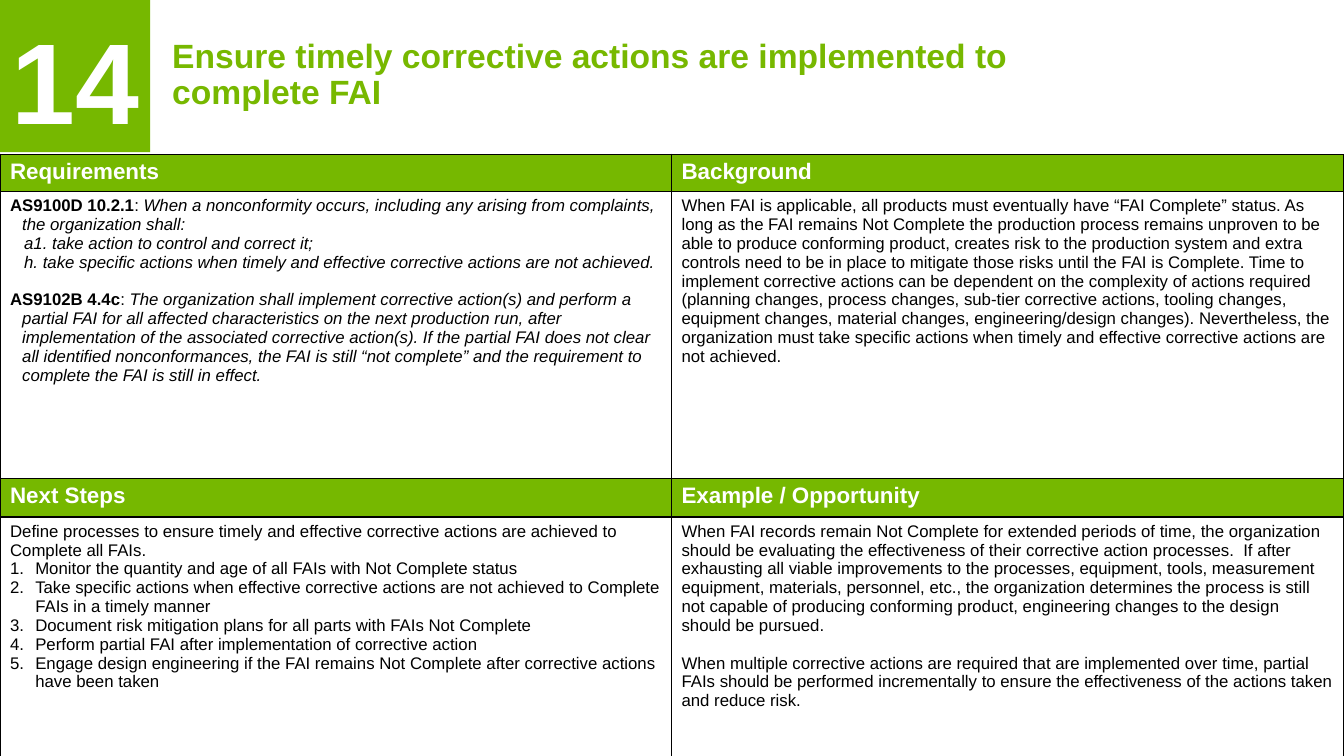
from pptx import Presentation
from pptx.dml.color import RGBColor
from pptx.enum.shapes import MSO_SHAPE as Shape
from pptx.enum.text import MSO_ANCHOR as Anchor, PP_ALIGN as Align
from pptx.oxml import parse_xml
from pptx.oxml.ns import nsdecls
from pptx.util import Inches, Pt

GREEN = RGBColor(0x76, 0xB8, 0x00)
TITLE_GREEN = RGBColor(0x77, 0xB8, 0x00)
WHITE = RGBColor(0xFF, 0xFF, 0xFF)
BLACK = RGBColor(0x00, 0x00, 0x00)

HEADING = {"size": Pt(16), "bold": True, "color": WHITE}
BODY = {"size": Pt(12), "bold": False, "italic": False, "color": BLACK}
STRONG = {**BODY, "bold": True}
QUOTE = {**BODY, "italic": True}
TITLE = {"size": Pt(24), "bold": True, "color": TITLE_GREEN}
NUMBER = {"size": Pt(82), "bold": True, "color": WHITE}

HANGING = {"indent": (0.12, -0.12)}
CLAUSE = {"indent": (0.26, -0.12)}
STEP = {"indent": (0.25, -0.25), "numbered": True}
AFTER_GAP = {"space_before": Pt(13.5)}

REQUIREMENTS = [
    ([("AS9100D 10.2.1", STRONG), (": ", BODY),
      ("When a nonconformity occurs, including any arising from complaints, "
       "the organization shall:", QUOTE)], HANGING),
    ([("a1. take action to control and correct it;", QUOTE)], CLAUSE),
    ([("h. take specific actions when timely and effective corrective actions "
       "are not achieved.", QUOTE)], CLAUSE),
    ([("AS9102B 4.4c", STRONG), (": ", BODY),
      ("The organization shall implement corrective action(s) and perform a "
       "partial FAI for all affected characteristics on the next production "
       "run, after implementation of the associated corrective action(s). If "
       "the partial FAI does not clear all identified nonconformances, the FAI "
       "is still “not complete” and the requirement to complete the FAI is "
       "still in effect.", QUOTE)], {**HANGING, **AFTER_GAP}),
]
BACKGROUND = [
    ([("When FAI is applicable, all products must eventually have “FAI "
       "Complete” status. As long as the FAI remains Not Complete the "
       "production process remains unproven to be able to produce conforming "
       "product, creates risk to the production system and extra controls need "
       "to be in place to mitigate those risks until the FAI is Complete. Time "
       "to implement corrective actions can be dependent on the complexity of "
       "actions required (planning changes, process changes, sub-tier "
       "corrective actions, tooling changes, equipment changes, material "
       "changes, engineering/design changes). Nevertheless, the organization "
       "must take specific actions when timely and effective corrective "
       "actions are not achieved.", BODY)], {}),
]
STEPS = [
    "Monitor the quantity and age of all FAIs with Not Complete status",
    "Take specific actions when effective corrective actions are not achieved "
    "to Complete FAIs in a timely manner",
    "Document risk mitigation plans for all parts with FAIs Not Complete",
    "Perform partial FAI after implementation of corrective action",
    "Engage design engineering if the FAI remains Not Complete after "
    "corrective actions have been taken",
]
NEXT_STEPS = [
    ([("Define processes to ensure timely and effective corrective actions are "
       "achieved to Complete all FAIs.", BODY)], {}),
    *[([(step, BODY)], STEP) for step in STEPS],
]
EXAMPLE = [
    ([("When FAI records remain Not Complete for extended periods of time, the "
       "organization should be evaluating the effectiveness of their "
       "corrective action processes.  If after exhausting all viable "
       "improvements to the processes, equipment, tools, measurement "
       "equipment, materials, personnel, etc., the organization determines the "
       "process is still not capable of producing conforming product, "
       "engineering changes to the design should be pursued.", BODY)], {}),
    ([("When multiple corrective actions are required that are implemented "
       "over time, partial FAIs should be performed incrementally to ensure "
       "the effectiveness of the actions taken and reduce risk.", BODY)],
     AFTER_GAP),
]


def heading(text):
    """Return the content of a heading cell."""
    return [([(text, HEADING)], {})]


ROWS = [
    (0.37, GREEN, [heading("Requirements"), heading("Background")]),
    (2.85, WHITE, [REQUIREMENTS, BACKGROUND]),
    (0.38, GREEN, [heading("Next Steps"), heading("Example / Opportunity")]),
    (2.38, WHITE, [NEXT_STEPS, EXAMPLE]),
]
COLUMNS = [6.66, 6.67]


def add_span(para, text, style):
    """Append a run of text with its font values."""
    span = para.add_run()
    span.text = text
    span.font.name = "Arial"
    for name, value in style.items():
        if name == "color":
            span.font.color.rgb = value
        else:
            setattr(span.font, name, value)


def format_para(para, layout):
    """Apply indent, numbering and paragraph values."""
    for name, value in layout.items():
        if name == "indent":
            margin, first = value
            para._p.get_or_add_pPr().set("marL", str(Inches(margin)))
            para._p.get_or_add_pPr().set("indent", str(Inches(first)))
        elif name == "numbered":
            para._p.get_or_add_pPr().append(parse_xml(
                f'<a:buAutoNum {nsdecls("a")} type="arabicPeriod"/>'))
        else:
            setattr(para, name, value)


def write(frame, content):
    """Fill a text frame with formatted paragraphs."""
    for index, (spans, layout) in enumerate(content):
        para = frame.add_paragraph() if index else frame.paragraphs[0]
        format_para(para, layout)
        for text, style in spans:
            add_span(para, text, style)


def add_borders(cell):
    """Draw a thin black line on every side of a cell."""
    properties = cell._tc.get_or_add_tcPr()
    for side in ("lnL", "lnR", "lnT", "lnB"):
        properties.append(parse_xml(
            f'<a:{side} {nsdecls("a")} w="{Pt(1)}"><a:solidFill>'
            f'<a:srgbClr val="{BLACK}"/></a:solidFill></a:{side}>'))


def add_title(page, text):
    """Add the slide title."""
    box = page.shapes.add_textbox(
        Inches(1.61), Inches(0.14), Inches(9.01), Inches(1.22))
    frame = box.text_frame
    frame.word_wrap = True
    frame.vertical_anchor = Anchor.MIDDLE
    write(frame, [([(text, TITLE)], {"line_spacing": 0.9})])


def add_number(page, text):
    """Add the green square with the topic number."""
    box = page.shapes.add_shape(
        Shape.RECTANGLE, 0, 0, Inches(1.49), Inches(1.51))
    box.shadow.inherit = False
    box.fill.solid()
    box.fill.fore_color.rgb = GREEN
    box.line.fill.background()
    box.text_frame.word_wrap = False
    box.text_frame.vertical_anchor = Anchor.BOTTOM
    write(box.text_frame, [([(text, NUMBER)], {"alignment": Align.CENTER})])


def add_topic_table(page):
    """Add the table of four headed topics."""
    table = page.shapes.add_table(
        len(ROWS), len(COLUMNS), 0, Inches(1.53),
        Inches(sum(COLUMNS)), Inches(sum(row[0] for row in ROWS))).table
    table.first_row = table.horz_banding = False
    for column, width in zip(table.columns, COLUMNS):
        column.width = Inches(width)
    for row, (height, color, contents) in zip(table.rows, ROWS):
        row.height = Inches(height)
        for cell, content in zip(row.cells, contents):
            add_borders(cell)
            cell.fill.solid()
            cell.fill.fore_color.rgb = color
            write(cell.text_frame, content)


def main():
    """Build the slide and save it."""
    deck = Presentation()
    deck.slide_width, deck.slide_height = Inches(13.33), Inches(7.5)
    page = deck.slides.add_slide(deck.slide_layouts[6])
    add_title(page, "Ensure timely corrective actions are implemented to "
                    "complete FAI")
    add_number(page, "14")
    add_topic_table(page)
    deck.save("out.pptx")


if __name__ == "__main__":
    main()
